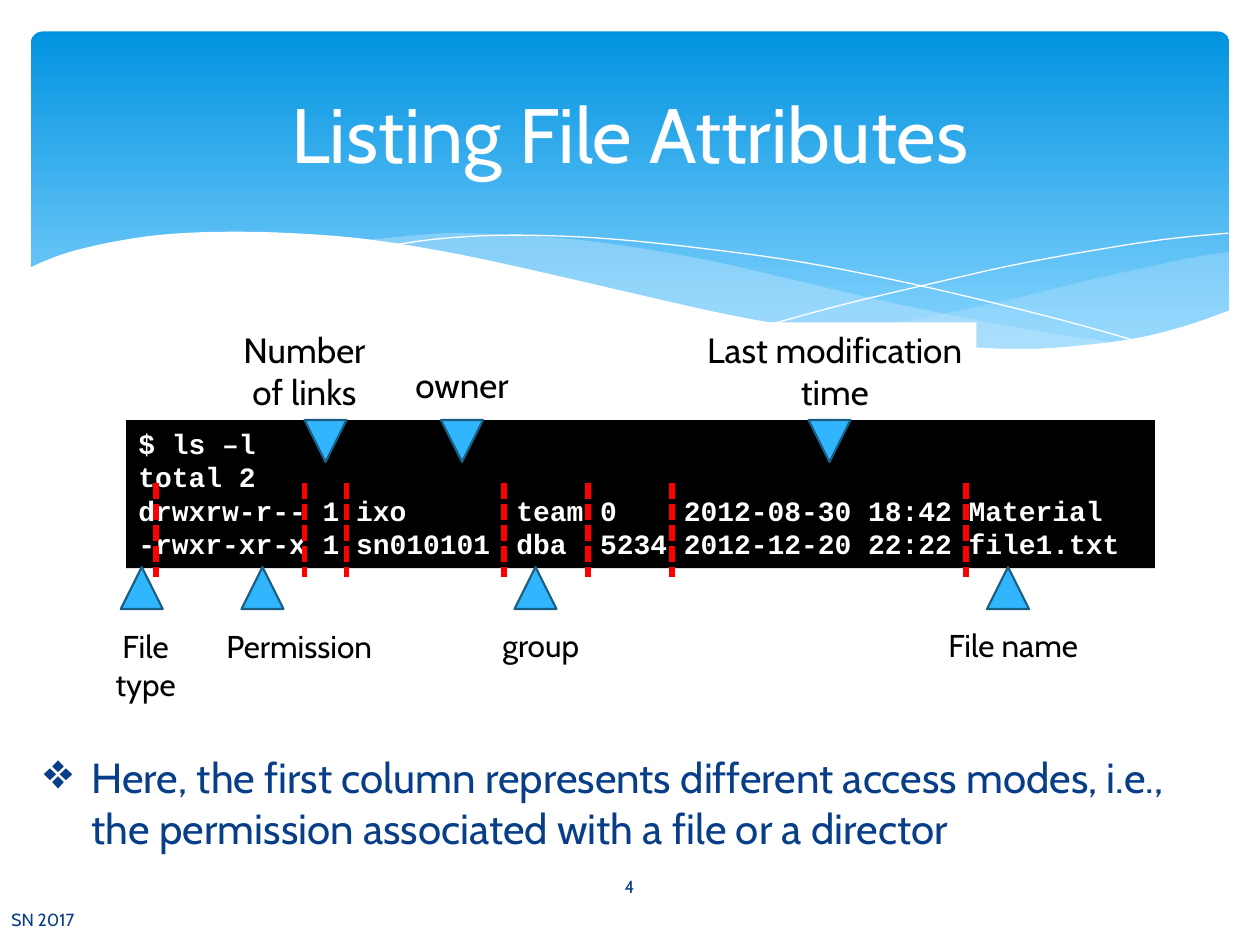
from dataclasses import dataclass
from typing import Optional

from lxml.etree import SubElement
from pptx import Presentation
from pptx.dml.color import RGBColor
from pptx.enum.dml import MSO_LINE_DASH_STYLE as Dash
from pptx.enum.shapes import MSO_CONNECTOR as Connector, MSO_SHAPE as Preset
from pptx.enum.text import MSO_ANCHOR as Anchor, MSO_AUTO_SIZE as AutoSize, PP_ALIGN as Align
from pptx.oxml.ns import qn
from pptx.util import Emu, Inches, Pt

WHITE = RGBColor(0xFF, 0xFF, 0xFF)
BLACK = RGBColor(0x00, 0x00, 0x00)
RED = RGBColor(0xFF, 0x00, 0x00)
NAVY = RGBColor(0x07, 0x3E, 0x87)
SKY_TOP = RGBColor(0x02, 0x93, 0xE0)
SKY_BOTTOM = RGBColor(0x83, 0xD3, 0xFE)
MIST = RGBColor(0xC6, 0xE7, 0xFC)
POINTER_BLUE = RGBColor(0x31, 0xB6, 0xFD)
POINTER_EDGE = RGBColor(0x19, 0x5F, 0x84)

BODY_FONT = "Cabin"
CODE_FONT = "Courier New"
CELL = Inches(1) // 12
CURVE_STEPS = 5
POINTER_SIZE = 4
TERMINAL_TOP, TERMINAL_BOTTOM = 40, 54

Point = tuple[float, float]


@dataclass(frozen=True)
class Box:
    left: float
    top: float
    width: float
    height: float

    def lengths(self) -> list[Emu]:
        return [Emu(round(n * CELL)) for n in (self.left, self.top, self.width, self.height)]


@dataclass(frozen=True)
class Style:
    size: int
    color: RGBColor
    font: str = BODY_FONT
    bold: bool = False
    align: Align = Align.LEFT


@dataclass(frozen=True)
class Field:
    label: str
    box: Box
    pointer_left: float
    above: bool


@dataclass(frozen=True)
class Wave:
    edges: tuple[tuple[Point, ...], ...]
    fill: Optional[RGBColor] = None
    alpha: int = 100


WAVES = (
    Wave((((9.76, 2), (9.48, 2.04), (9.06, 2.13), (8.61, 2.23), (8.05, 2.37), (7.29, 2.53), (6.61, 2.65)),
          ((6.61, 2.65), (7.05, 2.71), (7.57, 2.76), (8.03, 2.78), (8.54, 2.76), (8.97, 2.7),
           (9.35, 2.62), (9.76, 2.47))), MIST, 29),
    Wave((((8.93, 2.73), (8.37, 2.65), (7.75, 2.54), (7.06, 2.4), (6.29, 2.22), (5.69, 2.08), (5.14, 1.98),
           (4.65, 1.91), (4.2, 1.87), (3.61, 1.85), (3.28, 1.87), (2.86, 1.91)),
          ((2.86, 1.91), (3.42, 1.99), (4.04, 2.11), (4.49, 2.22), (5.3, 2.4), (6.01, 2.55), (6.65, 2.66),
           (7.22, 2.74), (7.73, 2.77), (8.18, 2.78), (8.57, 2.77), (8.93, 2.73))), MIST, 40),
    Wave((((3.09, 1.95), (3.44, 1.9), (3.87, 1.87), (4.33, 1.87), (4.89, 1.9), (5.56, 1.97), (6.36, 2.08),
           (7.27, 2.26), (8.31, 2.51), (9.07, 2.72)),)),
    Wave((((6.13, 2.57), (6.72, 2.41), (7.48, 2.23), (8.06, 2.1), (8.66, 1.99), (9.24, 1.9), (9.75, 1.85)),)),
    Wave((((9.77, 2.46), (9.4, 2.59), (8.99, 2.69), (8.5, 2.75), (8.09, 2.77), (7.61, 2.75), (7.08, 2.7),
           (6.48, 2.62), (5.79, 2.5), (5.03, 2.33), (4.47, 2.2), (3.65, 2.02), (2.92, 1.9), (2.3, 1.85),
           (1.77, 1.84), (1.32, 1.86), (0.95, 1.91), (0.59, 1.99), (0.36, 2.07), (0.23, 2.13)),
          ((0.23, 3.29), (9.77, 3.29))), WHITE),
)

FIELDS = (
    Field("File type", Box(8.75, 59.1, 10.25, 8.5), 11.5, False),
    Field("Permission", Box(20, 59.1, 17, 4.8), 23, False),
    Field("Number of links", Box(21, 30.7, 16, 9.25), 29, True),
    Field("owner", Box(36, 34, 16, 5.25), 42, True),
    Field("group", Box(43, 59, 17, 4.8), 49, False),
    Field("File name", Box(88, 59, 17, 4.8), 94, False),
    Field("Last modification time", Box(66, 30.7, 27, 9.25), 77, True),
)
DIVIDERS = (14.85, 29, 33, 48, 56, 64, 92)
LISTING = (
    "$ ls –l",
    "total 2",
    "drwxrw-r-- 1 ixo \tteam 0    2012-08-30 18:42 Material",
    "-rwxr-xr-x 1 sn010101 \tdba  5234 2012-12-20 22:22 file1.txt",
)


def smooth(points: tuple[Point, ...]) -> list[Point]:
    padded = (points[0], *points, points[-1])
    curve = [points[0]]
    for a, b, c, d in zip(padded, padded[1:], padded[2:], padded[3:]):
        for step in range(1, CURVE_STEPS + 1):
            t = step / CURVE_STEPS
            curve.append(tuple(
                (2 * q + (r - p) * t + (2 * p - 5 * q + 4 * r - s) * t ** 2
                 + (3 * q - p - 3 * r + s) * t ** 3) / 2
                for p, q, r, s in zip(a, b, c, d)))
    return curve


def draw_wave(page, wave: Wave) -> None:
    outline = [(Inches(x), Inches(y)) for edge in wave.edges for x, y in smooth(edge)]
    builder = page.shapes.build_freeform(*outline[0])
    builder.add_line_segments(outline[1:], close=wave.fill is not None)
    shape = builder.convert_to_shape()
    shape.shadow.inherit = False
    if wave.fill is None:
        shape.fill.background()
        shape.line.color.rgb = WHITE
        shape.line.width = Pt(0)
        return
    shape.fill.solid()
    shape.fill.fore_color.rgb = wave.fill
    shape.line.fill.background()
    if wave.alpha < 100:
        color = shape.fill._xPr.find(qn("a:solidFill"))[0]
        SubElement(color, qn("a:alpha")).set("val", str(wave.alpha * 1000))


def add_preset(page, preset: Preset, box: Box, color: RGBColor):
    shape = page.shapes.add_shape(preset, *box.lengths())
    shape.shadow.inherit = False
    shape.fill.solid()
    shape.fill.fore_color.rgb = color
    shape.line.fill.background()
    return shape


def write(shape, lines: tuple[str, ...], style: Style, anchor: Anchor = Anchor.TOP) -> None:
    frame = shape.text_frame
    frame.word_wrap = True
    frame.vertical_anchor = anchor
    if anchor == Anchor.TOP:
        frame.auto_size = AutoSize.SHAPE_TO_FIT_TEXT
    for index, line in enumerate(lines):
        para = frame.paragraphs[0] if index == 0 else frame.add_paragraph()
        para.add_run().text = line
        para.alignment = style.align
        para.font.name = style.font
        para.font.size = Pt(style.size)
        para.font.bold = style.bold
        para.font.color.rgb = style.color


def add_text(page, text: str, box: Box, style: Style, anchor: Anchor = Anchor.MIDDLE):
    shape = page.shapes.add_textbox(*box.lengths())
    write(shape, (text,), style, anchor)
    return shape


def draw_banner(page) -> None:
    banner = add_preset(page, Preset.ROUNDED_RECTANGLE, Box(2.95, 3, 114.15, 32.4), SKY_TOP)
    banner.adjustments[0] = 0.034
    banner.fill.gradient()
    banner.fill.gradient_angle = 270
    for stop, color, position in zip(banner.fill.gradient_stops, (SKY_TOP, SKY_BOTTOM), (0, 0.9)):
        stop.color.rgb = color
        stop.position = position
    for wave in WAVES:
        draw_wave(page, wave)


def draw_field(page, field: Field) -> None:
    label = add_preset(page, Preset.RECTANGLE, field.box, WHITE)
    write(label, (field.label,), Style(20 if field.above else 18, BLACK, align=Align.CENTER))
    top = TERMINAL_TOP if field.above else TERMINAL_BOTTOM
    pointer = add_preset(page, Preset.ISOSCELES_TRIANGLE,
                         Box(field.pointer_left, top, POINTER_SIZE, POINTER_SIZE), POINTER_BLUE)
    pointer.rotation = 180 if field.above else 0
    pointer.line.color.rgb = POINTER_EDGE
    pointer.line.width = Pt(1.25)


def draw_divider(page, column: float) -> None:
    x = round(column * CELL)
    line = page.shapes.add_connector(Connector.STRAIGHT, x, 46 * CELL, x, 55 * CELL)
    line.line.color.rgb = RED
    line.line.width = Pt(3)
    line.line.dash_style = Dash.SQUARE_DOT
    SubElement(line._element.spPr, qn("a:effectLst"))


def add_tab_stop(para, position: Emu) -> None:
    properties = para._p.get_or_add_pPr()
    stops = properties.makeelement(qn("a:tabLst"))
    SubElement(stops, qn("a:tab"), {"pos": str(position), "algn": "l"})
    properties.insert(0, stops)


def add_bullet(para) -> None:
    properties = para._p.get_or_add_pPr()
    properties.set("marL", str(Inches(0.38)))
    properties.set("indent", str(-Inches(0.38)))
    properties.insert(0, properties.makeelement(qn("a:buSzPct"), {"val": "120000"}))
    properties.insert(1, properties.makeelement(qn("a:buChar"), {"char": "❖"}))


def main() -> None:
    deck = Presentation()
    deck.slide_width, deck.slide_height = Inches(10), Inches(7.5)
    page = deck.slides.add_slide(deck.slide_layouts[6])
    draw_banner(page)
    add_text(page, "Listing File Attributes", Box(6, 4.4, 108, 16.4), Style(44, WHITE, align=Align.CENTER))
    add_text(page, "4", Box(52.3, 82, 15.3, 4.8), Style(10, NAVY, align=Align.CENTER))
    terminal = add_preset(page, Preset.RECTANGLE, Box(12, TERMINAL_TOP, 98, 14.1), BLACK)
    write(terminal, LISTING, Style(16, WHITE, CODE_FONT, True))
    for para in terminal.text_frame.paragraphs:
        add_tab_stop(para, Inches(3))
    for field in FIELDS:
        draw_field(page, field)
    for column in DIVIDERS:
        draw_divider(page, column)
    add_text(page, "SN 2017", Box(-0.1, 85.2, 66.1, 4.8), Style(10, NAVY))
    note = add_text(page, "Here, the first column represents different access modes, i.e., "
                    "the permission associated with a file or a director",
                    Box(3, 71, 113, 10.9), Style(24, NAVY), Anchor.TOP)
    add_bullet(note.text_frame.paragraphs[0])
    deck.save("out.pptx")


if __name__ == "__main__":
    main()
